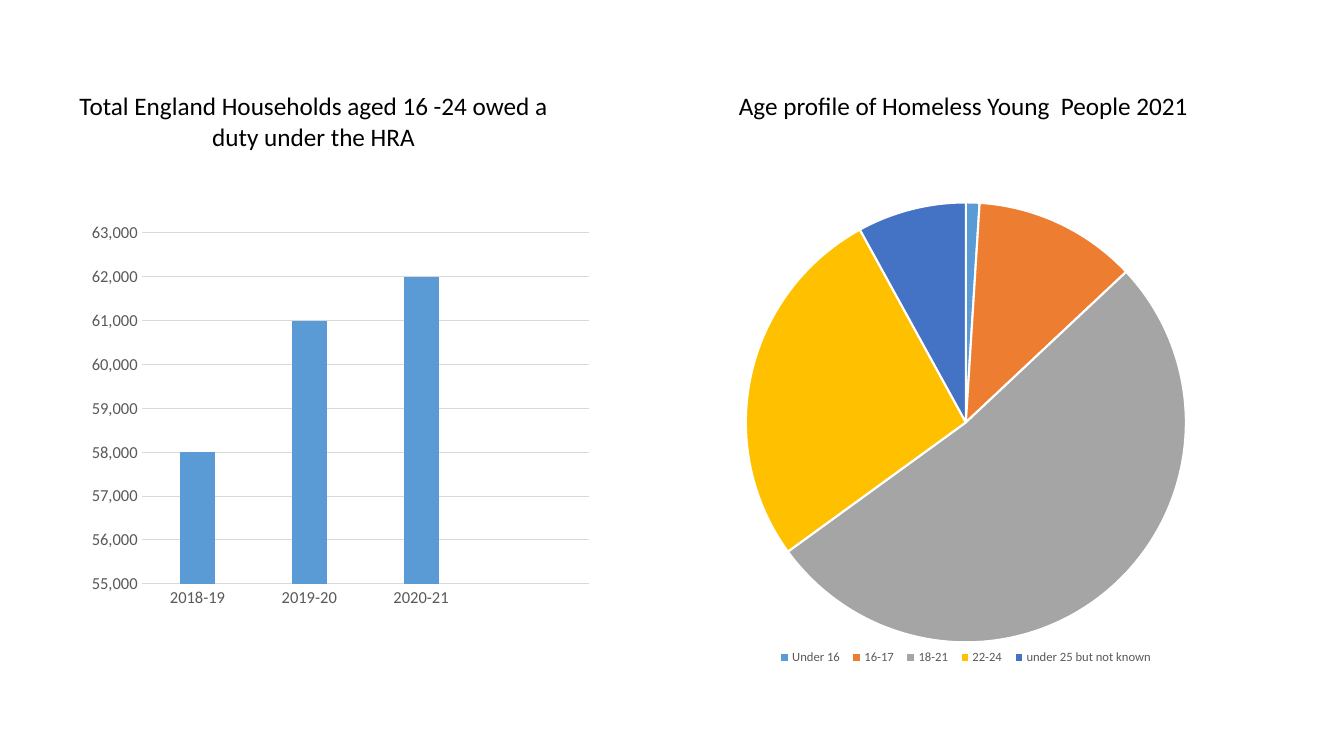
"""Build a slide comparing young homeless households by year and by age."""
from dataclasses import dataclass

import lxml.etree
import pptx
import pptx.chart.data
import pptx.dml.color
import pptx.enum.chart
import pptx.enum.text
import pptx.oxml.ns
import pptx.util

Inches = pptx.util.Inches
Pt = pptx.util.Pt
XL = pptx.enum.chart
FONT = "Calibri"
GREY = "595959"
RULE = "D9D9D9"


@dataclass
class Panel:
    kind: XL.XL_CHART_TYPE
    box: tuple[float, float, float, float]
    categories: list[str]
    values: list[float | None]
    heading: str
    heading_box: tuple[float, float, float, float]
    align: pptx.enum.text.PP_ALIGN
    wrap: bool


PANELS = [
    Panel(
        XL.XL_CHART_TYPE.COLUMN_CLUSTERED, (0.91, 1.86, 5.24, 4.52),
        ["2018-19", "2019-20", "2020-21", ""], [58000, 61000, 62000, None],
        "Total England Households aged 16 -24 owed a duty under the HRA",
        (0.64, 0.85, 4.94, 0.71), pptx.enum.text.PP_ALIGN.CENTER, True,
    ),
    Panel(
        XL.XL_CHART_TYPE.PIE, (6.75, 1.86, 5.66, 4.96),
        ["Under 16", "16-17", "18-21", "22-24", "under 25 but not known"],
        [1, 12, 52, 27, 8],
        "Age profile of Homeless Young  People 2021",
        (7.23, 0.85, 4.71, 0.71), pptx.enum.text.PP_ALIGN.LEFT, False,
    ),
]
SLICE_COLOURS = ["5B9BD5", "ED7D31", "A5A5A5", "FFC000", "4472C4"]


def rgb(value: str) -> pptx.dml.color.RGBColor:
    return pptx.dml.color.RGBColor.from_string(value)


def set_font(font, size: float, colour: str) -> None:
    font.name = FONT
    font.size = Pt(size)
    font.color.rgb = rgb(colour)


def set_fill(fill, colour: str) -> None:
    fill.solid()
    fill.fore_color.rgb = rgb(colour)


def set_line(line, colour: str, width: float) -> None:
    line.color.rgb = rgb(colour)
    line.width = Pt(width)


def add_text(slide, text: str, box: tuple, *, size: float, colour: str,
             align: pptx.enum.text.PP_ALIGN, wrap: bool) -> None:
    tf = slide.shapes.add_textbox(*map(Inches, box)).text_frame
    tf.word_wrap = wrap
    tf.auto_size = pptx.enum.text.MSO_AUTO_SIZE.SHAPE_TO_FIT_TEXT
    p = tf.paragraphs[0]
    p.alignment = align
    r = p.add_run()
    r.text = text
    set_font(r.font, size, colour)


def set_layout(parent, index: int, x: float, y: float, w: float, h: float,
               target: str | None = None) -> None:
    qn = pptx.oxml.ns.qn
    for old in parent.findall(qn("c:layout")):
        parent.remove(old)
    layout = lxml.etree.Element(qn("c:layout"))
    manual = lxml.etree.SubElement(layout, qn("c:manualLayout"))
    settings = {"layoutTarget": target} if target else {}
    settings |= {"xMode": "edge", "yMode": "edge", "x": x, "y": y, "w": w, "h": h}
    for tag, value in settings.items():
        lxml.etree.SubElement(manual, qn(f"c:{tag}")).set("val", str(value))
    parent.insert(index, layout)


def format_columns(chart) -> None:
    plot = chart.plots[0]
    plot.gap_width = 219
    plot.overlap = -27
    set_fill(plot.series[0].format.fill, SLICE_COLOURS[0])
    for axis in (chart.category_axis, chart.value_axis):
        axis.major_tick_mark = axis.minor_tick_mark = XL.XL_TICK_MARK.NONE
        set_font(axis.tick_labels.font, 12, GREY)
    set_line(chart.category_axis.format.line, RULE, 0.75)
    values = chart.value_axis
    values.minimum_scale, values.maximum_scale = 55000, 63000
    values.major_unit = 1000
    values.tick_labels.number_format = "#,##0"
    values.tick_labels.number_format_is_linked = False
    values.format.line.fill.background()
    set_line(values.major_gridlines.format.line, RULE, 0.75)
    set_layout(chart._chartSpace.chart.plotArea, 0, 0.08, 0.1, 0.86, 0.77, "inner")


def format_pie(chart) -> None:
    for i, colour in enumerate(SLICE_COLOURS):
        point = chart.plots[0].series[0].points[i]
        set_fill(point.format.fill, colour)
        set_line(point.format.line, "FFFFFF", 1.5)
    chart.has_legend = True
    chart.legend.position = XL.XL_LEGEND_POSITION.BOTTOM
    chart.legend.include_in_layout = False
    set_font(chart.legend.font, 9, GREY)
    set_layout(chart._chartSpace.chart.plotArea, 0, 0.11, 0.03, 0.78, 0.88, "inner")
    set_layout(chart.legend._element, 1, 0.16, 0.91, 0.68, 0.06)


def add_panel(slide, panel: Panel) -> None:
    data = pptx.chart.data.CategoryChartData()
    data.categories = panel.categories
    data.add_series("Series 1", panel.values)
    chart = slide.shapes.add_chart(panel.kind, *map(Inches, panel.box), data).chart
    chart.has_title = False
    chart.has_legend = False
    set_font(chart.font, 10, "000000")
    is_pie = panel.kind == XL.XL_CHART_TYPE.PIE
    chart.plots[0].vary_by_categories = is_pie
    if is_pie:
        format_pie(chart)
    else:
        format_columns(chart)
    add_text(slide, panel.heading, panel.heading_box, size=18, colour="000000",
             align=panel.align, wrap=panel.wrap)


def main() -> None:
    prs = pptx.Presentation()
    prs.slide_width, prs.slide_height = Inches(13.33), Inches(7.5)
    slide = prs.slides.add_slide(prs.slide_layouts[6])
    for panel in PANELS:
        add_panel(slide, panel)
    prs.save("out.pptx")


if __name__ == "__main__":
    main()
